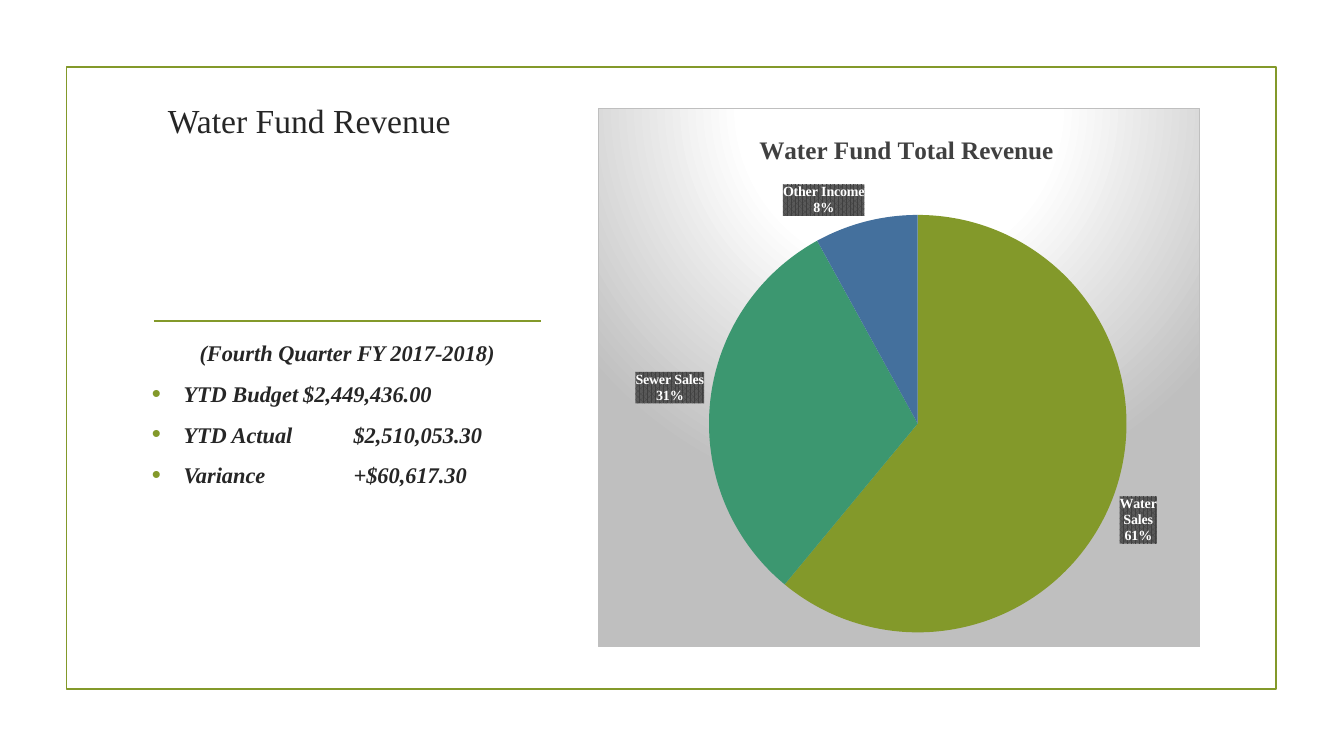
from dataclasses import dataclass
from typing import Optional

from lxml import etree
from pptx import Presentation
from pptx.chart.data import CategoryChartData
from pptx.dml.color import RGBColor
from pptx.enum.chart import XL_CHART_TYPE as ChartType, XL_LABEL_POSITION as LabelPos
from pptx.enum.shapes import MSO_CONNECTOR as Connector, MSO_SHAPE as Preset
from pptx.enum.text import MSO_ANCHOR as Anchor, PP_ALIGN as Align
from pptx.oxml import parse_xml
from pptx.oxml.ns import nsdecls, qn
from pptx.util import Pt


@dataclass(frozen=True)
class Theme:
    font: str = "Times New Roman"
    ink: str = "262626"
    chart_ink: str = "404040"
    label_ink: str = "FFFFFF"
    label_weave: str = "595959"
    accent: str = "83992A"
    chart_edge: str = "BFBFBF"
    chart_glow: str = "FFFFFF"
    title_size: int = 24
    body_size: int = 16
    chart_title_size: int = 18
    label_size: int = 10


@dataclass(frozen=True)
class Box:
    left: float
    top: float
    width: float
    height: float

    def lengths(self) -> tuple:
        return Pt(self.left), Pt(self.top), Pt(self.width), Pt(self.height)


@dataclass(frozen=True)
class Line:
    text: str
    bullet: bool = False


@dataclass(frozen=True)
class Revenue:
    source: str
    percent: int
    color: str


THEME = Theme()
SUMMARY = [
    Line("(Fourth Quarter FY 2017-2018)"),
    Line("YTD Budget\t$2,449,436.00", bullet=True),
    Line("YTD Actual\t\t$2,510,053.30", bullet=True),
    Line("Variance\t\t+$60,617.30", bullet=True),
]
REVENUES = [
    Revenue("Water Sales", 61, THEME.accent),
    Revenue("Sewer Sales", 31, "3C9770"),
    Revenue("Other Income", 8, "44709D"),
]


def rgb(color: str) -> RGBColor:
    return RGBColor.from_string(color)


def style_font(font, size: float, color: str, bold: bool = False, italic: bool = False) -> None:
    font.name, font.size, font.bold, font.italic = THEME.font, Pt(size), bold, italic
    font.color.rgb = rgb(color)


def add_bullet(paragraph) -> None:
    properties = paragraph._p.get_or_add_pPr()
    properties.set("marL", str(Pt(22.5)))
    properties.set("indent", str(-Pt(22.5)))
    properties.set("defTabSz", str(Pt(36)))
    color = etree.SubElement(properties, qn("a:buClr"))
    etree.SubElement(color, qn("a:srgbClr"), val=THEME.accent)
    etree.SubElement(properties, qn("a:buSzPct"), val="115000")
    etree.SubElement(properties, qn("a:buFont"), typeface="Arial")
    etree.SubElement(properties, qn("a:buChar"), char="•")


def add_text(slide, box: Box, lines: list[Line], *, size: float, anchor=Anchor.TOP,
             bold: bool = False, italic: bool = False, before: float = 0, after: float = 0) -> None:
    frame = slide.shapes.add_textbox(*box.lengths()).text_frame
    frame.word_wrap = True
    frame.vertical_anchor = anchor
    for index, line in enumerate(lines):
        paragraph = frame.add_paragraph() if index else frame.paragraphs[0]
        if line.bullet:
            add_bullet(paragraph)
        paragraph.alignment = Align.LEFT if line.bullet else Align.CENTER
        paragraph.space_before = Pt(before if index else 0)
        paragraph.space_after = Pt(after)
        run = paragraph.add_run()
        run.text = line.text
        style_font(run.font, size, THEME.ink, bold, italic)


def add_frame(slide, box: Box) -> None:
    frame = slide.shapes.add_shape(Preset.RECTANGLE, *box.lengths())
    frame.shadow.inherit = False
    frame.fill.background()
    frame.line.color.rgb = rgb(THEME.accent)
    frame.line.width = Pt(1.25)


def add_rule(slide, left: float, right: float, top: float) -> None:
    rule = slide.shapes.add_connector(Connector.STRAIGHT, Pt(left), Pt(top), Pt(right), Pt(top))
    rule.line.color.rgb = rgb(THEME.accent)
    rule.line.width = Pt(1.25)
    etree.SubElement(rule._element.spPr, qn("a:effectLst"))


def chart_layout(x: float, y: float, w: Optional[float] = None, h: Optional[float] = None):
    layout = parse_xml(f'<c:layout {nsdecls("c")}><c:manualLayout/></c:layout>')
    manual = layout[0]
    if w is not None:
        etree.SubElement(manual, qn("c:layoutTarget"), val="inner")
    for tag in ("xMode", "yMode"):
        etree.SubElement(manual, qn(f"c:{tag}"), val="edge")
    for tag, value in zip("xywh", (x, y, w, h)):
        if value is not None:
            etree.SubElement(manual, qn(f"c:{tag}"), val=str(value))
    return layout


def drop_layout(parent) -> None:
    for layout in parent.findall(qn("c:layout")):
        parent.remove(layout)


def shade_chart(chart) -> None:
    stops = "".join(
        f'<a:gs pos="{position}"><a:srgbClr val="{color}"/></a:gs>'
        for position, color in ((0, THEME.chart_glow), (39000, THEME.chart_glow), (100000, THEME.chart_edge))
    )
    chart._chartSpace.find(qn("c:chart")).addnext(parse_xml(
        f'<c:spPr {nsdecls("c", "a")}><a:gradFill><a:gsLst>{stops}</a:gsLst><a:path path="circle">'
        '<a:fillToRect l="50000" t="-80000" r="50000" b="180000"/></a:path></a:gradFill>'
        f'<a:ln w="{Pt(0.75)}"><a:solidFill><a:srgbClr val="{THEME.chart_edge}"/></a:solidFill></a:ln></c:spPr>'
    ))


def label_slices(plot) -> None:
    plot.has_data_labels = True
    labels = plot.data_labels
    labels.show_value = False
    labels.show_percentage = labels.show_category_name = True
    labels.number_format, labels.number_format_is_linked = "0%", False
    labels.position = LabelPos.OUTSIDE_END
    style_font(labels.font, THEME.label_size, THEME.label_ink, bold=True)
    labels._element.find(qn("c:txPr")).addprevious(parse_xml(
        f'<c:spPr {nsdecls("c", "a")}><a:pattFill prst="pct75">'
        f'<a:fgClr><a:srgbClr val="{THEME.chart_ink}"/></a:fgClr>'
        f'<a:bgClr><a:srgbClr val="{THEME.label_weave}"/></a:bgClr></a:pattFill></c:spPr>'
    ))


def add_revenue_pie(slide, box: Box, title: str, revenues: list[Revenue]) -> None:
    data = CategoryChartData()
    data.categories = [revenue.source for revenue in revenues]
    data.add_series("Series 1", [revenue.percent for revenue in revenues])
    chart = slide.shapes.add_chart(ChartType.PIE, *box.lengths(), data).chart
    style_font(chart.font, THEME.label_size, "000000")
    chart.has_legend = False
    chart.has_title = True
    heading = chart.chart_title.text_frame.paragraphs[0].add_run()
    heading.text = title
    style_font(heading.font, THEME.chart_title_size, THEME.chart_ink, bold=True)
    title_element = chart.chart_title._element
    drop_layout(title_element)
    title_element.find(qn("c:tx")).addnext(chart_layout(0.26, 0.04))
    plot = chart.plots[0]
    plot.vary_by_categories = True
    for index, revenue in enumerate(revenues):
        fill = plot.series[0].points[index].format.fill
        fill.solid()
        fill.fore_color.rgb = rgb(revenue.color)
    label_slices(plot)
    plot_area = chart._chartSpace.find(f'{qn("c:chart")}/{qn("c:plotArea")}')
    drop_layout(plot_area)
    plot_area.insert(0, chart_layout(0.184, 0.198, 0.694, 0.775))
    shade_chart(chart)


def main() -> None:
    deck = Presentation()
    deck.slide_width, deck.slide_height = Pt(960), Pt(540)
    slide = deck.slides.add_slide(deck.slide_layouts[6])
    add_frame(slide, Box(47.5, 48, 864, 444))
    add_rule(slide, 110, 386.5, 229.5)
    add_text(slide, Box(66, 36, 310, 67.5), [Line("Water Fund Revenue")],
             size=THEME.title_size, anchor=Anchor.BOTTOM)
    add_text(slide, Box(101.5, 238.5, 293, 192), SUMMARY,
             size=THEME.body_size, bold=True, italic=True, before=4, after=6)
    add_revenue_pie(slide, Box(427, 77, 430.5, 385.5), "Water Fund Total Revenue", REVENUES)
    deck.save("out.pptx")


if __name__ == "__main__":
    main()
